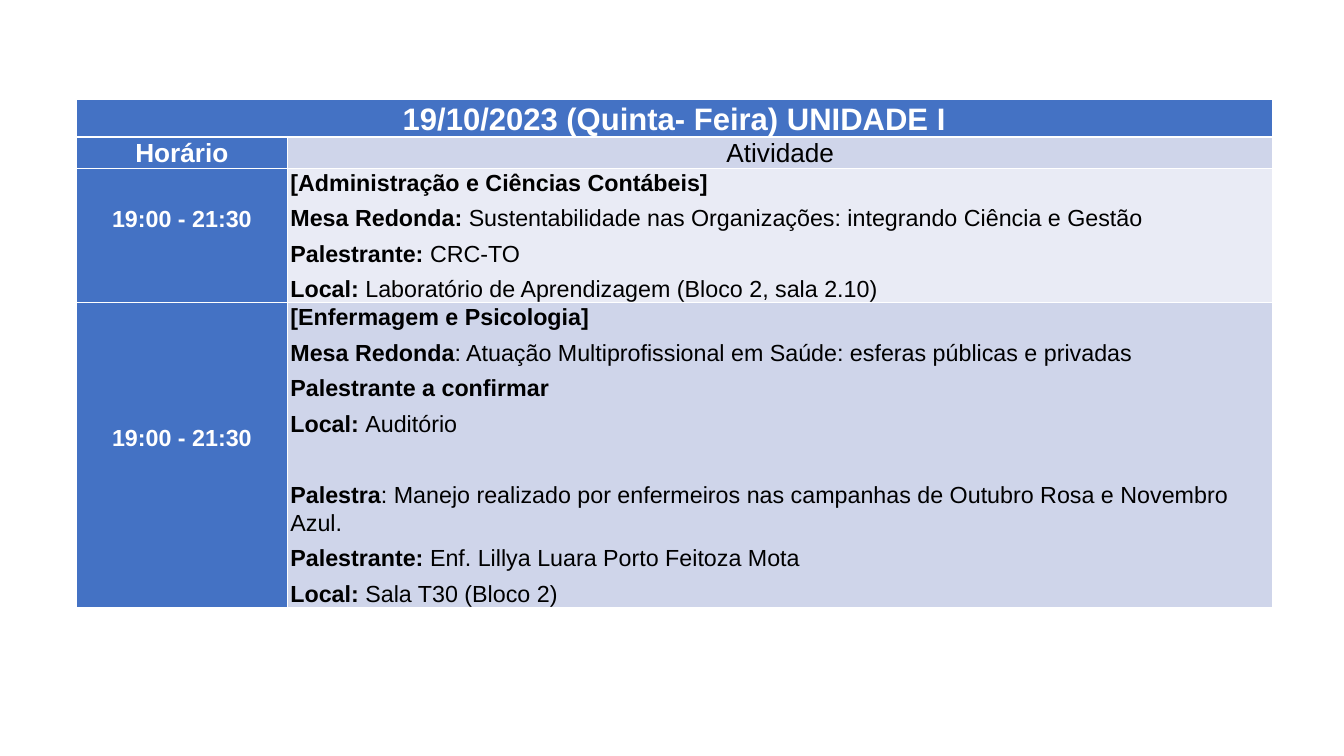
import pptx
import pptx.dml.color
import pptx.enum.text
import pptx.oxml.ns
import pptx.util
import lxml.etree

Cm = pptx.util.Cm
Pt = pptx.util.Pt
ALIGN = pptx.enum.text.PP_ALIGN
BLUE, PALE, MIST = "4472C4", "CFD5EA", "E9EBF5"
WHITE, BLACK = "FFFFFF", "000000"


def write(cell, lines, size=24, color=BLACK, align=ALIGN.LEFT, gap=None):
    """Fill a cell with (bold, plain) lines; gap is the line set apart from those above."""
    cell.margin_left = cell.margin_right = Cm(0.1)
    cell.margin_top = cell.margin_bottom = 0
    frame = cell.text_frame
    for i, parts in enumerate(lines):
        para = frame.paragraphs[0] if i == 0 else frame.add_paragraph()
        para.alignment = align
        para.line_spacing = 1.07
        para.space_after = Pt(8)
        if i == gap:
            para.space_before = Pt(37)
        for text, bold in zip(parts, (True, False)):
            if text:
                run = para.add_run()
                run.text = text
                run.font.name = "Arial"
                run.font.size = Pt(size)
                run.font.bold = bold
                run.font.color.rgb = pptx.dml.color.RGBColor.from_string(color)


def paint(cell, fill, base=1):
    """Give a cell white borders and a fill; base is the bottom border in points."""
    props = cell._tc.get_or_add_tcPr()
    for side, width in (("L", 1), ("R", 1), ("T", 1), ("B", base)):
        line = lxml.etree.SubElement(props, pptx.oxml.ns.qn(f"a:ln{side}"), w=str(Pt(width)))
        solid = lxml.etree.SubElement(line, pptx.oxml.ns.qn("a:solidFill"))
        lxml.etree.SubElement(solid, pptx.oxml.ns.qn("a:srgbClr"), val=WHITE)
    cell.fill.solid()
    cell.fill.fore_color.rgb = pptx.dml.color.RGBColor.from_string(fill)


deck = pptx.Presentation()
deck.slide_width, deck.slide_height = Cm(48.92), Cm(27.51)
slide = deck.slides.add_slide(deck.slide_layouts[6])

widths = [7.7, 35.86]
heights = [1.36, 1.12, 4.88, 11.05]
table = slide.shapes.add_table(
    len(heights), len(widths), Cm(2.77), Cm(3.63), Cm(sum(widths)), Cm(sum(heights))
).table
for col, width in zip(table.columns, widths):
    col.width = Cm(width)
for row, height in zip(table.rows, heights):
    row.height = Cm(height)

# Title and column heads
table.cell(0, 0).merge(table.cell(0, 1))
for col in range(2):
    paint(table.cell(0, col), BLUE, base=3)
write(table.cell(0, 0), [("19/10/2023 (Quinta- Feira) UNIDADE I",)], 32, WHITE, ALIGN.CENTER)
write(table.cell(1, 0), [("Horário",)], 27, WHITE, ALIGN.CENTER)
write(table.cell(1, 1), [("", "Atividade")], 27, BLACK, ALIGN.CENTER)
paint(table.cell(1, 0), BLUE)
paint(table.cell(1, 1), PALE)

# Sessions: time, fill, line set apart, activity lines
sessions = [
    ("19:00 - 21:30", MIST, None, [
        ("[Administração e Ciências Contábeis]",),
        ("Mesa Redonda: ", "Sustentabilidade nas Organizações: integrando Ciência e Gestão"),
        ("Palestrante: ", "CRC-TO"),
        ("Local: ", "Laboratório de Aprendizagem (Bloco 2, sala 2.10)"),
    ]),
    ("19:00 - 21:30", PALE, 4, [
        ("[Enfermagem e Psicologia]",),
        ("Mesa Redonda", ": Atuação Multiprofissional em Saúde: esferas públicas e privadas"),
        ("Palestrante a confirmar",),
        ("Local: ", "Auditório"),
        ("Palestra", ": Manejo realizado por enfermeiros nas campanhas de "
                     "Outubro Rosa e Novembro Azul."),
        ("Palestrante: ", "Enf. Lillya Luara Porto Feitoza Mota"),
        ("Local: ", "Sala T30 (Bloco 2)"),
    ]),
]
for row, (time, fill, gap, lines) in enumerate(sessions, start=2):
    hour, event = table.cell(row, 0), table.cell(row, 1)
    write(hour, [(time,)], color=WHITE, align=ALIGN.CENTER)
    write(event, lines, gap=gap)
    hour.margin_bottom = Cm(1.25)
    for cell, shade in ((hour, BLUE), (event, fill)):
        cell.vertical_anchor = pptx.enum.text.MSO_ANCHOR.MIDDLE
        paint(cell, shade)

deck.save("out.pptx")
